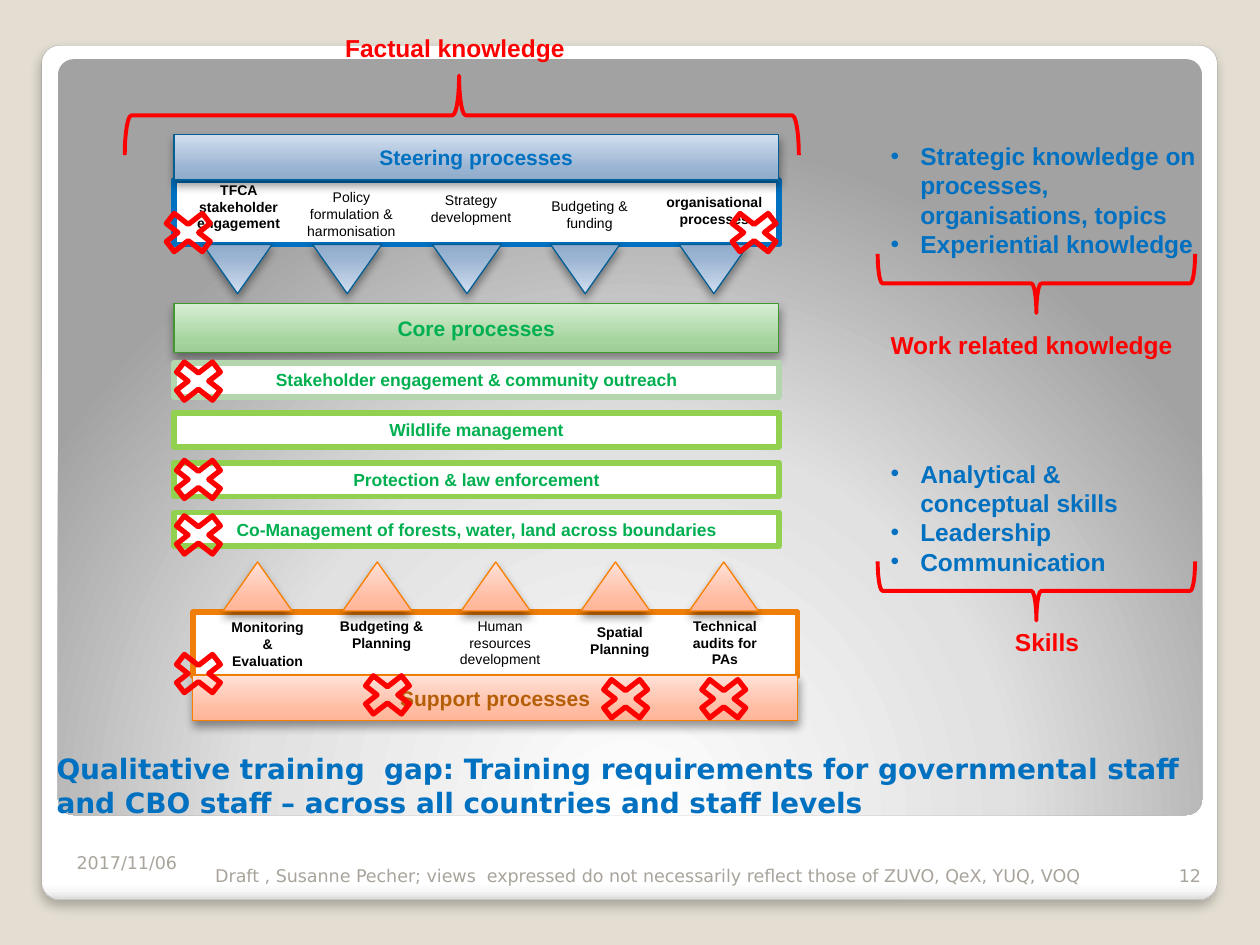
from typing import NamedTuple, Optional

from lxml import etree
from pptx import Presentation
from pptx.dml.color import RGBColor
from pptx.enum import shapes, text
from pptx.oxml.ns import qn
from pptx.util import Pt

COLORS = {
    "backdrop": "E3DED1", "white": "FFFFFF", "black": "000000", "red": "FF0000",
    "blue": "0070C0", "blue_edge": "035E94", "green": "00B050", "green_edge": "439631",
    "lime": "92D050", "pale_green": "B3D6AC", "orange": "F07F09", "orange_edge": "F97F00",
    "brown": "B45F07", "footer": "A8A49B", "panel_edge": "A4A4A4",
}
GRADIENTS = {
    "blue": [(0, "90ABCB"), (25, "99B3D2"), (100, "D1DEEE")],
    "green": [(0, "9DCD96"), (25, "A5D49E"), (100, "D7EED3")],
    "orange": [(0, "FFB598"), (25, "FFBCA2"), (100, "FFE1D8")],
    "card": [(0, "FFFFFF"), (98, "FFFFFF"), (99, "F7F7F7"), (100, "DADADA")],
    "panel": [(0, "FFFFFF"), (55, "E1E1E1"), (100, "A2A2A2")],
}
MSO = shapes.MSO_SHAPE
LEFT, CENTER, RIGHT = text.PP_ALIGN.LEFT, text.PP_ALIGN.CENTER, text.PP_ALIGN.RIGHT
TOP, MIDDLE, BOTTOM = text.MSO_ANCHOR.TOP, text.MSO_ANCHOR.MIDDLE, text.MSO_ANCHOR.BOTTOM
BAR_LEFT, SUPPORT_LEFT, BAR_WIDTH = 99.4, 110.2, 345.6
SIDE_LEFT = 501.8


class Box(NamedTuple):
    x: float
    y: float
    w: float
    h: float


class Style(NamedTuple):
    size: float
    color: str
    bold: bool = True
    align: int = CENTER
    anchor: int = TOP
    font: str = "Arial"
    bullet: bool = False


class Label(NamedTuple):
    words: str
    x: float
    y: float
    w: float = 67.7
    bold: bool = True


class Brace(NamedTuple):
    box: Box
    rotation: int
    tip: float = 0.5


def rgb(name: str) -> RGBColor:
    return RGBColor.from_string(COLORS[name])


def write(sp, lines: list[str], style: Style) -> None:
    tf = sp.text_frame
    tf.word_wrap = True
    tf.vertical_anchor = style.anchor
    tf.text = "\n".join(lines)
    for p in tf.paragraphs:
        p.alignment = style.align
        if style.bullet:
            ppr = p._p.get_or_add_pPr()
            ppr.set("marL", str(Pt(17)))
            ppr.set("indent", str(-Pt(17)))
            etree.SubElement(ppr, qn("a:buFont")).set("typeface", "Arial")
            etree.SubElement(ppr, qn("a:buChar")).set("char", "•")
        for r in p.runs:
            r.font.name = style.font
            r.font.size = Pt(style.size)
            r.font.bold = style.bold
            r.font.color.rgb = rgb(style.color)


def add_text(s, box: Box, lines: list[str], style: Style) -> None:
    write(s.shapes.add_textbox(*map(Pt, box)), lines, style)


def add_shape(s, kind, box: Box, fill: Optional[str], line: Optional[str],
              width: float = 0.75, rotation: int = 0):
    sp = s.shapes.add_shape(kind, *map(Pt, box))
    sp.rotation = rotation
    sp.shadow.inherit = False
    if fill:
        sp.fill.solid()
        sp.fill.fore_color.rgb = rgb(fill)
    else:
        sp.fill.background()
    if line:
        sp.line.color.rgb = rgb(line)
        sp.line.width = Pt(width)
    else:
        sp.line.fill.background()
    return sp


def set_gradient(sp, name: str, angle: Optional[int]) -> None:
    sp.fill.gradient()
    grad = sp._element.spPr.find(qn("a:gradFill"))
    grad.clear()
    stops = etree.SubElement(grad, qn("a:gsLst"))
    for position, color in GRADIENTS[name]:
        stop = etree.SubElement(stops, qn("a:gs"), pos=str(position * 1000))
        etree.SubElement(stop, qn("a:srgbClr"), val=color)
    if angle is None:
        radial = etree.SubElement(grad, qn("a:path"), path="circle")
        etree.SubElement(radial, qn("a:fillToRect"), l="50000", t="175000", r="50000", b="-75000")
    else:
        etree.SubElement(grad, qn("a:lin"), ang=str(angle * 60000), scaled="0")


def set_shadow(sp, alpha: int, blur: float, distance: float) -> None:
    effects = sp._element.spPr.find(qn("a:effectLst"))
    shadow = etree.SubElement(effects, qn("a:outerShdw"), blurRad=str(Pt(blur)),
                              dist=str(Pt(distance)), dir="5400000", rotWithShape="0")
    color = etree.SubElement(shadow, qn("a:srgbClr"), val=COLORS["black"])
    etree.SubElement(color, qn("a:alpha"), val=str(alpha * 1000))


def add_raised(s, kind, box: Box, hue: str, rotation: int = 0):
    sp = add_shape(s, kind, box, "white", f"{hue}_edge", 0.75, rotation)
    set_gradient(sp, hue, 270)
    set_shadow(sp, 40, 5.2, 3)
    return sp


def add_bar(s, box: Box, words: str, hue: str, color: str) -> None:
    write(add_raised(s, MSO.RECTANGLE, box, hue), [words], Style(12, color, anchor=MIDDLE))


def add_label(s, label: Label) -> None:
    add_text(s, Box(label.x, label.y, label.w, 36), [label.words],
             Style(8, "black", bold=label.bold))


def add_brace(s, brace: Brace) -> None:
    sp = add_shape(s, MSO.RIGHT_BRACE, brace.box, None, "red", 2.25, brace.rotation)
    sp.adjustments[1] = brace.tip


STEERING = [
    Label("TFCA stakeholder engagement", 105.1, 100.1, 62.6),
    Label("Policy formulation & harmonisation", 167, 104.2, bold=False),
    Label("Strategy development", 235.4, 105.8, bold=False),
    Label("Budgeting & funding", 303.1, 109.4, bold=False),
    Label("organisational processes", 371.5, 107.3, 73.4),
]
SUPPORT = [
    Label("Monitoring & Evaluation", 121.7, 349.9, 62.6),
    Label("Budgeting & Planning", 184.3, 349.2),
    Label("Human resources development", 252, 349.2, bold=False),
    Label("Spatial Planning", 320.4, 352.8),
    Label("Technical audits for PAs", 383, 349.2, 62.6),
]
CORE = [
    ("Stakeholder engagement & community outreach", "pale_green"),
    ("Wildlife management", "lime"),
    ("Protection & law enforcement", "lime"),
    ("Co-Management of forests, water, land across boundaries", "lime"),
]
DOWN_ARROWS = [115.9, 178.6, 247, 314.6, 388.1]
UP_ARROWS = [127.4, 195.8, 263.5, 331.9, 393.8]
CROSSES = [(87.8, 117.4), (411.1, 117.4), (93.6, 202.3), (93.6, 258.5), (93.6, 290.2),
           (93.6, 369.4), (201.6, 381.6), (393.8, 383.8), (337.7, 383.8)]
BRACES = [
    Brace(Box(241.2, -126.7, 45.4, 385.2), 270, 0.496),
    Brace(Box(575.3, 71.3, 33.8, 181.4), 90),
    Brace(Box(575.3, 247, 33.8, 181.4), 90),
]
HEADING = Style(14, "red", align=LEFT)
BULLETS = Style(14, "blue", align=LEFT, bullet=True)
TITLE = Style(16, "blue", align=LEFT, anchor=BOTTOM, font="DejaVu Sans")
FOOTER = Style(10, "footer", False, LEFT, BOTTOM, "DejaVu Sans")
TEXTS = [
    (Box(25.2, 434.2, 680.4, 37.4),
     ["Qualitative training  gap: Training requirements for governmental staff "
      "and CBO staff – across all countries and staff levels"], TITLE),
    (Box(36.7, 479.5, 181.4, 23), ["2017/11/06"], FOOTER),
    (Box(657.4, 481, 36, 28.8), ["12"], FOOTER._replace(align=RIGHT)),
    (Box(115.9, 496.8, 546.5, 13),
     ["Draft , Susanne Pecher; views  expressed do not necessarily reflect "
      "those of ZUVO, QeX, YUQ, VOQ"], FOOTER),
    (Box(190.1, 15.1, 193, 24.5), ["Factual knowledge"], HEADING),
    (Box(SIDE_LEFT, 77, 193, 92.2),
     ["Strategic knowledge on processes, organisations, topics", "Experiential knowledge"], BULLETS),
    (Box(SIDE_LEFT, 185, 193, 24.5), ["Work related knowledge"], HEADING),
    (Box(SIDE_LEFT, 258.5, 181.4, 74.9),
     ["Analytical & conceptual skills", "Leadership", "Communication"], BULLETS),
    (Box(SIDE_LEFT, 355, 193, 24.5), ["Skills"], HEADING._replace(align=CENTER)),
]


def main() -> None:
    prs = Presentation()
    prs.slide_width, prs.slide_height = Pt(720), Pt(540)
    s = prs.slides.add_slide(prs.slide_layouts[6])
    s.background.fill.solid()
    s.background.fill.fore_color.rgb = rgb("backdrop")

    card = add_shape(s, MSO.ROUNDED_RECTANGLE, Box(23.8, 25.9, 671.8, 488.2),
                     "white", "panel_edge", 0.16)
    set_gradient(card, "card", 90)
    set_shadow(card, 25, 6, 4)
    panel = add_shape(s, MSO.ROUNDED_RECTANGLE, Box(33.1, 33.8, 653.8, 432), "white", None)
    set_gradient(panel, "panel", None)
    for sp in (card, panel):
        sp.adjustments[0] = 0.021

    add_shape(s, MSO.RECTANGLE, Box(BAR_LEFT, 103, BAR_WIDTH, 36.7), "white", "blue", 3.35)
    add_bar(s, Box(BAR_LEFT, 77, BAR_WIDTH, 25.9), "Steering processes", "blue", "blue")
    add_bar(s, Box(BAR_LEFT, 173.5, BAR_WIDTH, 28.1), "Core processes", "green", "green")
    for i, (words, edge) in enumerate(CORE):
        row = add_shape(s, MSO.RECTANGLE, Box(BAR_LEFT, 207.4 + 28.5 * i, BAR_WIDTH, 19.4),
                        "white", edge, 3.35)
        write(row, [words], Style(10, "green", anchor=MIDDLE))
    add_shape(s, MSO.RECTANGLE, Box(SUPPORT_LEFT, 349.9, BAR_WIDTH, 36.7), "white", "orange", 3.35)
    add_bar(s, Box(SUPPORT_LEFT, 385.9, BAR_WIDTH, 25.9), "Support processes", "orange", "brown")

    for x in DOWN_ARROWS:
        add_raised(s, MSO.ISOSCELES_TRIANGLE, Box(x, 139.7, 39.6, 28.1), "blue", 180)
    for x in UP_ARROWS:
        add_raised(s, MSO.ISOSCELES_TRIANGLE, Box(x, 321.1, 39.6, 28.1), "orange")
    for label in STEERING + SUPPORT:
        add_label(s, label)
    for x, y in CROSSES:
        add_shape(s, MSO.MATH_MULTIPLY, Box(x, y, 39.6, 31), None, "red", 3)
    for brace in BRACES:
        add_brace(s, brace)
    for box, lines, style in TEXTS:
        add_text(s, box, lines, style)
    prs.save("out.pptx")


if __name__ == "__main__":
    main()
